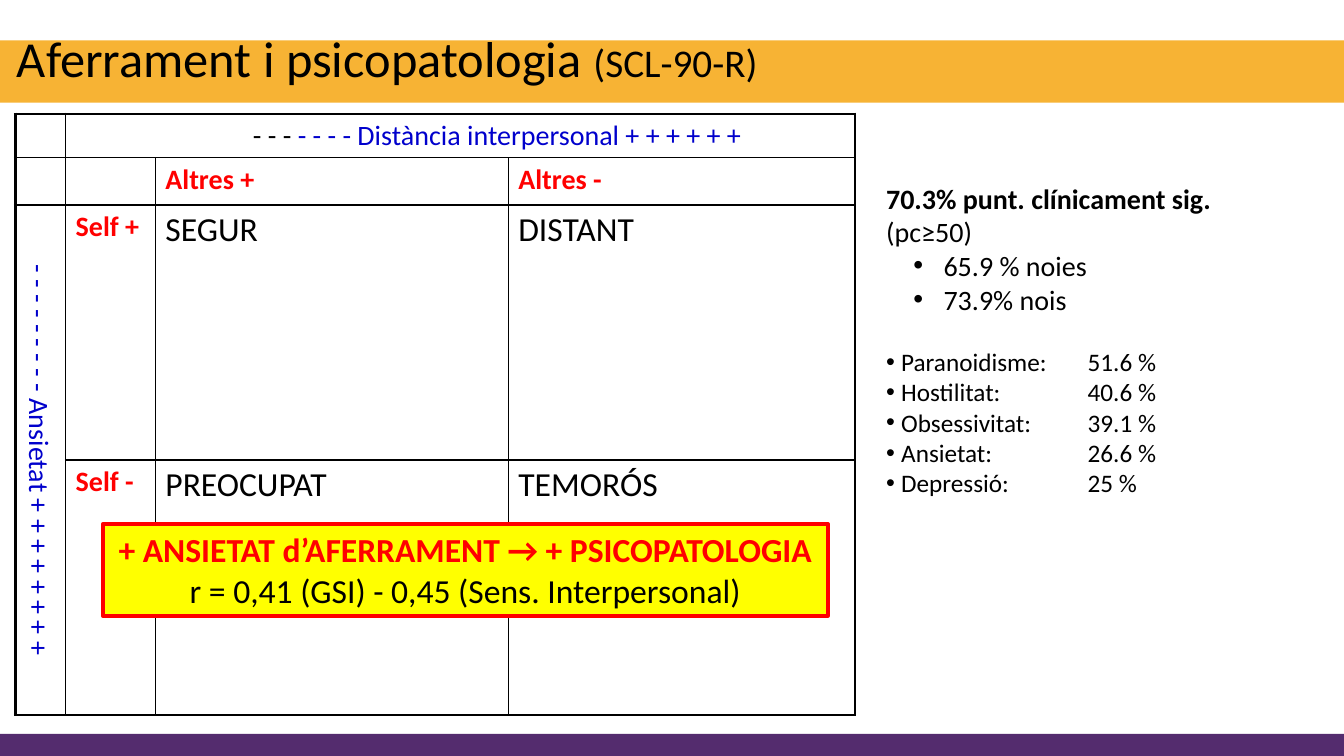
from lxml.etree import SubElement
from pptx import Presentation
from pptx.dml.color import RGBColor
from pptx.enum.shapes import MSO_SHAPE as Preset
from pptx.enum.text import MSO_ANCHOR as Anchor, PP_ALIGN as Align
from pptx.oxml import parse_xml
from pptx.oxml.ns import nsdecls, qn
from pptx.util import Inches, Pt

WIDTH, HEIGHT = Inches(13.33), Inches(7.5)
BLACK, RED, BLUE, YELLOW = "000000", "FF0000", "0000CC", "FFFF00"
ORANGE, PURPLE = "F7B334", "542C6E"
TABLE_LEFT, TABLE_TOP = 1.13, 15.07
COLUMNS = [3.75, 6.68, 26.26, 25.81]
ROWS = [5.73, 6.27, 33.73, 33.73]
HEADINGS = {(1, 2): "Altres +", (1, 3): "Altres -", (2, 1): "Self +", (3, 1): "Self -"}
STYLES = {(2, 2): "SEGUR", (2, 3): "DISTANT", (3, 2): "PREOCUPAT", (3, 3): "TEMORÓS"}
SYMPTOMS = [
    ("Paranoidisme", "51.6 %"),
    ("Hostilitat", "40.6 %"),
    ("Obsessivitat", "39.1 %"),
    ("Ansietat", "26.6 %"),
    ("Depressió", "25 %"),
]


def color(value):
    return RGBColor.from_string(value)


def across(share):
    return int(WIDTH * share / 100)


def down(share):
    return int(HEIGHT * share / 100)


def area(left, top, width, height):
    return across(left), down(top), across(width), down(height)


def write(para, *spans):
    for text, size, shade, bold in spans:
        span = para.add_run()
        span.text = text
        font = span.font
        font.name, font.size, font.bold = "Calibri", Pt(size), bold
        font.color.rgb = color(shade)


def add_box(page, place, fill, line=None):
    box = page.shapes.add_shape(Preset.RECTANGLE, *area(*place))
    box.shadow.inherit = False
    box.fill.solid()
    box.fill.fore_color.rgb = color(fill)
    if line:
        box.line.color.rgb = color(line)
        box.line.width = Pt(3)
    else:
        box.line.fill.background()
    return box


def add_text(page, place):
    frame = page.shapes.add_textbox(*area(*place)).text_frame
    frame.word_wrap = True
    return frame


def add_bullet(para, margin, hanging, tab=None):
    props = para._p.get_or_add_pPr()
    props.set("marL", str(Inches(margin)))
    props.set("indent", str(-Inches(hanging)))
    SubElement(props, qn("a:buFont"), typeface="Arial")
    SubElement(props, qn("a:buChar"), char="•")
    if tab:
        stops = SubElement(props, qn("a:tabLst"))
        SubElement(stops, qn("a:tab"), pos=str(Inches(tab)), algn="l")


def add_borders(cell, row, column):
    bottom, right = row + cell.span_height, column + cell.span_width
    outer = {
        "lnL": column == 0,
        "lnR": right == len(COLUMNS),
        "lnT": row == 0,
        "lnB": bottom == len(ROWS),
    }
    props = cell._tc.get_or_add_tcPr()
    for index, (side, thick) in enumerate(outer.items()):
        props.insert(index, parse_xml(
            f'<a:{side} {nsdecls("a")} w="{Pt(2.25 if thick else 1)}"><a:solidFill>'
            f'<a:srgbClr val="{BLACK}"/></a:solidFill></a:{side}>'))


def add_attachment_table(page):
    place = (TABLE_LEFT, TABLE_TOP, sum(COLUMNS), sum(ROWS))
    table = page.shapes.add_table(len(ROWS), len(COLUMNS), *area(*place)).table
    table.first_row = table.horz_banding = False
    for column, share in zip(table.columns, COLUMNS):
        column.width = across(share)
    for row, share in zip(table.rows, ROWS):
        row.height = down(share)

    distance = table.cell(0, 1)
    distance.merge(table.cell(0, 3))
    table.cell(2, 0).merge(table.cell(3, 0))
    for row in range(len(ROWS)):
        for column in range(len(COLUMNS)):
            cell = table.cell(row, column)
            cell.fill.background()
            if not cell.is_spanned:
                add_borders(cell, row, column)

    distance.margin_left = Inches(0.83)
    para = distance.text_frame.paragraphs[0]
    para.alignment = Align.CENTER
    write(para, ("- - - ", 20, BLACK, False),
          ("- - - - Distància interpersonal + + + + + +", 20, BLUE, False))

    for labels, size, shade, bold in ((HEADINGS, 20, RED, True), (STYLES, 24, BLACK, False)):
        for position, label in labels.items():
            para = table.cell(*position).text_frame.paragraphs[0]
            write(para, (label, size, shade, bold))


def add_anxiety_axis(page):
    top = TABLE_TOP + sum(ROWS[:2])
    frame = add_text(page, (TABLE_LEFT, top, COLUMNS[0], sum(ROWS[2:])))
    frame.vertical_anchor = Anchor.MIDDLE
    frame._txBody.bodyPr.set("vert", "vert")
    para = frame.paragraphs[0]
    para.alignment = Align.CENTER
    write(para, ("- - - - - - - - - Ansietat + + + + + + + +", 20, BLUE, False))


def add_callout(page):
    frame = add_box(page, (7.65, 69.33, 53.94, 12.13), YELLOW, RED).text_frame
    frame.word_wrap = True
    frame.vertical_anchor = Anchor.TOP
    heading, detail = frame.paragraphs[0], frame.add_paragraph()
    heading.alignment = detail.alignment = Align.CENTER
    write(heading, ("+ ANSIETAT d’AFERRAMENT → + PSICOPATOLOGIA", 24, RED, True))
    write(detail, ("r = 0,41 (GSI) - 0,45 (Sens. Interpersonal)", 24, BLACK, False))


def add_findings(page):
    frame = add_text(page, (65.19, 23.33, 30, 47.6))
    write(frame.paragraphs[0], ("70.3% punt. clínicament sig.", 20, BLACK, True),
          (" (pc≥50)", 20, BLACK, False))
    for share in ("65.9 % noies", "73.9% nois"):
        para = frame.add_paragraph()
        add_bullet(para, 0.57, 0.3)
        write(para, (share, 20, BLACK, False))
    for index, (symptom, share) in enumerate(SYMPTOMS):
        para = frame.add_paragraph()
        if index == 0:
            para.space_before = Pt(22)
        add_bullet(para, 0.15, 0.15, 2)
        write(para, (f"{symptom}:\t{share}", 18, BLACK, False))


def main():
    deck = Presentation()
    deck.slide_width, deck.slide_height = WIDTH, HEIGHT
    page = deck.slides.add_slide(deck.slide_layouts[6])
    add_box(page, (0, 5.33, 100, 8.27), ORANGE)
    add_box(page, (0, 97.07, 100, 2.93), PURPLE)
    title = add_text(page, (0.53, 3.87, 74.64, 19.33)).paragraphs[0]
    title.line_spacing = 0.9
    write(title, ("Aferrament i psicopatologia ", 36, BLACK, False),
          ("(SCL-90-R)", 28, BLACK, False))
    add_attachment_table(page)
    add_anxiety_axis(page)
    add_callout(page)
    add_findings(page)
    deck.save("out.pptx")


if __name__ == "__main__":
    main()
